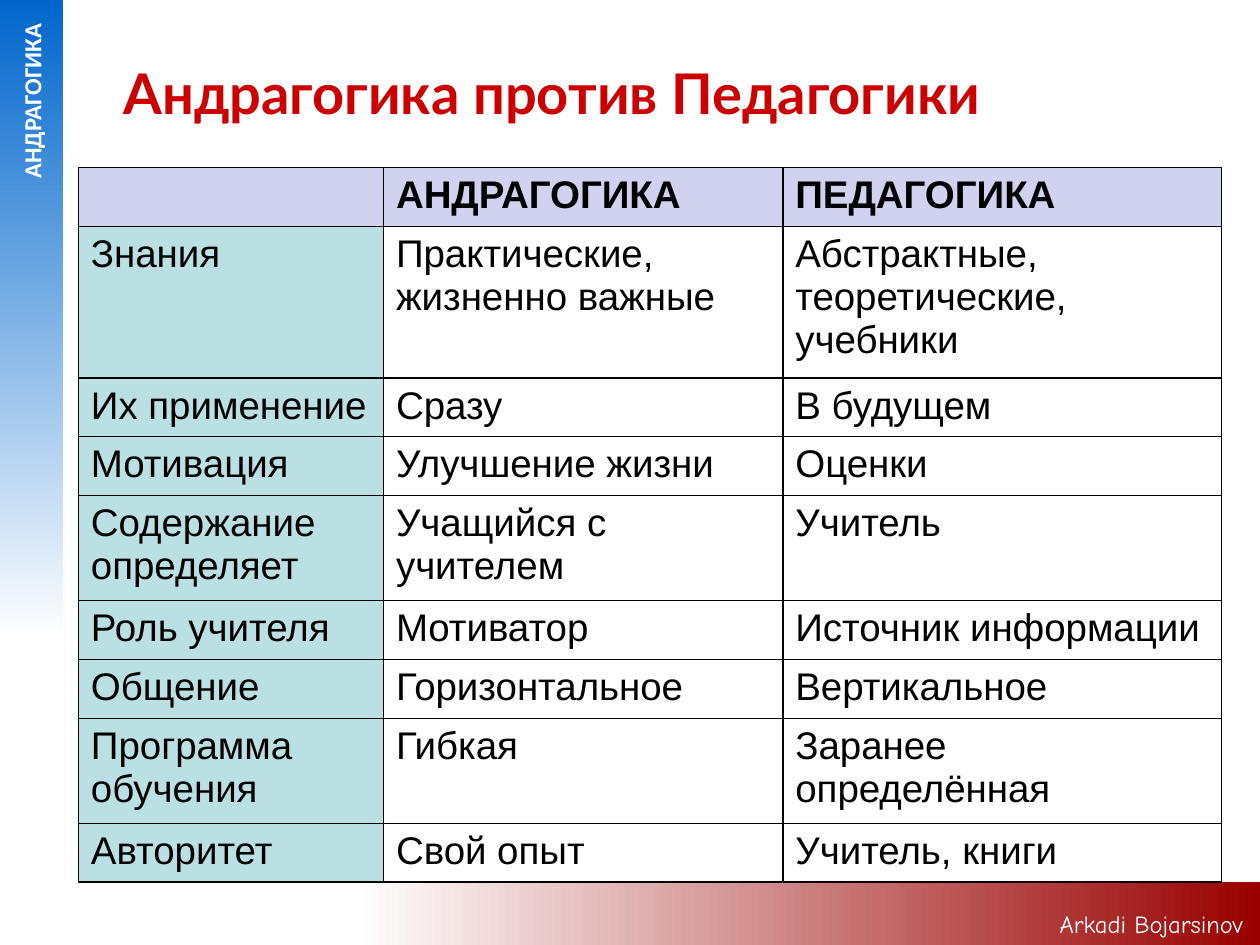
from lxml import etree
from pptx import Presentation
from pptx.dml.color import RGBColor
from pptx.enum.shapes import MSO_SHAPE
from pptx.enum.text import MSO_ANCHOR, PP_ALIGN
from pptx.oxml.ns import qn
from pptx.util import Cm, Pt

RECTANGLE = MSO_SHAPE.RECTANGLE
LEFT, RIGHT = PP_ALIGN.LEFT, PP_ALIGN.RIGHT
TOP, MIDDLE = MSO_ANCHOR.TOP, MSO_ANCHOR.MIDDLE

TITLE_ONLY = 5
DOWNWARD, RIGHTWARD = 270, 0
COLUMN_WIDTHS = [6.15, 8.05, 8.84]
HEADER_HEIGHT, ROW_HEIGHT = 1.19, 1.04
COMPARISON = [
    ("", "АНДРАГОГИКА", "ПЕДАГОГИКА"),
    ("Знания", "Практические, жизненно важные",
     "Абстрактные, теоретические, учебники"),
    ("Их применение", "Сразу", "В будущем"),
    ("Мотивация", "Улучшение жизни", "Оценки"),
    ("Содержание определяет", "Учащийся с учителем", "Учитель"),
    ("Роль учителя", "Мотиватор", "Источник информации"),
    ("Общение", "Горизонтальное", "Вертикальное"),
    ("Программа обучения", "Гибкая", "Заранее определённая"),
    ("Авторитет", "Свой опыт", "Учитель, книги"),
]


def color(hex_string):
    return RGBColor.from_string(hex_string)


def write(frame, text, font="Arial", size=22, ink="000000", bold=False,
          align=LEFT, anchor=TOP):
    frame.word_wrap = True
    frame.vertical_anchor = anchor
    para = frame.paragraphs[0]
    para.alignment = align
    span = para.add_run()
    span.text = text
    span.font.name = font
    span.font.size = Pt(size)
    span.font.bold = bold
    span.font.color.rgb = color(ink)


def add_gradient_band(page, box, start, end, angle):
    band = page.shapes.add_shape(RECTANGLE, *map(Cm, box))
    band.shadow.inherit = False
    band.line.fill.background()
    band.fill.gradient()
    band.fill.gradient_angle = angle
    for stop, shade in zip(band.fill.gradient_stops, (start, end)):
        stop.color.rgb = color(shade)


def add_sidebar(page, box):
    left, top, width, height = box
    add_gradient_band(page, box, "0066CC", "FFFFFF", DOWNWARD)
    # The label is turned about its centre, which lies on the band's axis
    label_length, label_height = 5.08, 0.84
    label = page.shapes.add_textbox(
        Cm(left + (width - label_length) / 2), Cm(top + 2.34),
        Cm(label_length), Cm(label_height))
    label.rotation = 270
    write(label.text_frame, "АНДРАГОГИКА", font="Calibri", size=14,
          ink="FFFFFF", bold=True, align=RIGHT)


def add_footer(page, box):
    left, top, width, height = box
    add_gradient_band(page, box, "FFFFFF", "990000", RIGHTWARD)
    author_width, author_height = 4.29, 0.84
    author = page.shapes.add_textbox(
        Cm(left + width - author_width), Cm(top + height - author_height),
        Cm(author_width), Cm(author_height))
    write(author.text_frame, "Arkadi Bojarsinov", font="Comic Neue", size=14,
          ink="FFFFFF")


def add_title(page, box):
    title = page.shapes.title
    title.left, title.top, title.width, title.height = map(Cm, box)
    write(title.text_frame, "Андрагогика против Педагогики", font="Lato",
          size=32, ink="CC0000", bold=True, anchor=MIDDLE)


def add_borders(cell):
    properties = cell._tc.get_or_add_tcPr()
    for position, side in enumerate(("a:lnL", "a:lnR", "a:lnT", "a:lnB")):
        line = etree.Element(qn(side), w=str(Pt(1)))
        fill = etree.SubElement(line, qn("a:solidFill"))
        etree.SubElement(fill, qn("a:srgbClr"), val="000000")
        properties.insert(position, line)


def add_comparison(page, left, top):
    heights = [HEADER_HEIGHT] + [ROW_HEIGHT] * (len(COMPARISON) - 1)
    table = page.shapes.add_table(
        len(heights), len(COLUMN_WIDTHS), Cm(left), Cm(top),
        Cm(sum(COLUMN_WIDTHS)), Cm(sum(heights))).table
    table.first_row = table.horz_banding = False
    for column, width in zip(table.columns, COLUMN_WIDTHS):
        column.width = Cm(width)
    for r, (row, height, texts) in enumerate(
            zip(table.rows, heights, COMPARISON)):
        row.height = Cm(height)
        for c, (cell, text) in enumerate(zip(row.cells, texts)):
            if r == 0 or c == 0:
                cell.fill.solid()
                cell.fill.fore_color.rgb = color("D1D1F0" if r == 0
                                                 else "BBE0E3")
            else:
                cell.fill.background()
            add_borders(cell)
            if text:
                write(cell.text_frame, text, bold=r == 0)


def main():
    deck = Presentation()
    deck.slide_width, deck.slide_height = Cm(25.4), Cm(19.05)
    page = deck.slides.add_slide(deck.slide_layouts[TITLE_ONLY])
    # Decorative bands with their labels
    add_sidebar(page, (0, 0, 1.27, 12.9))
    add_footer(page, (7.19, 17.78, 18.21, 1.27))
    # Content
    add_title(page, (2.24, 0.76, 21.67, 2.21))
    add_comparison(page, 1.58, 3.38)
    deck.save("out.pptx")


if __name__ == "__main__":
    main()
